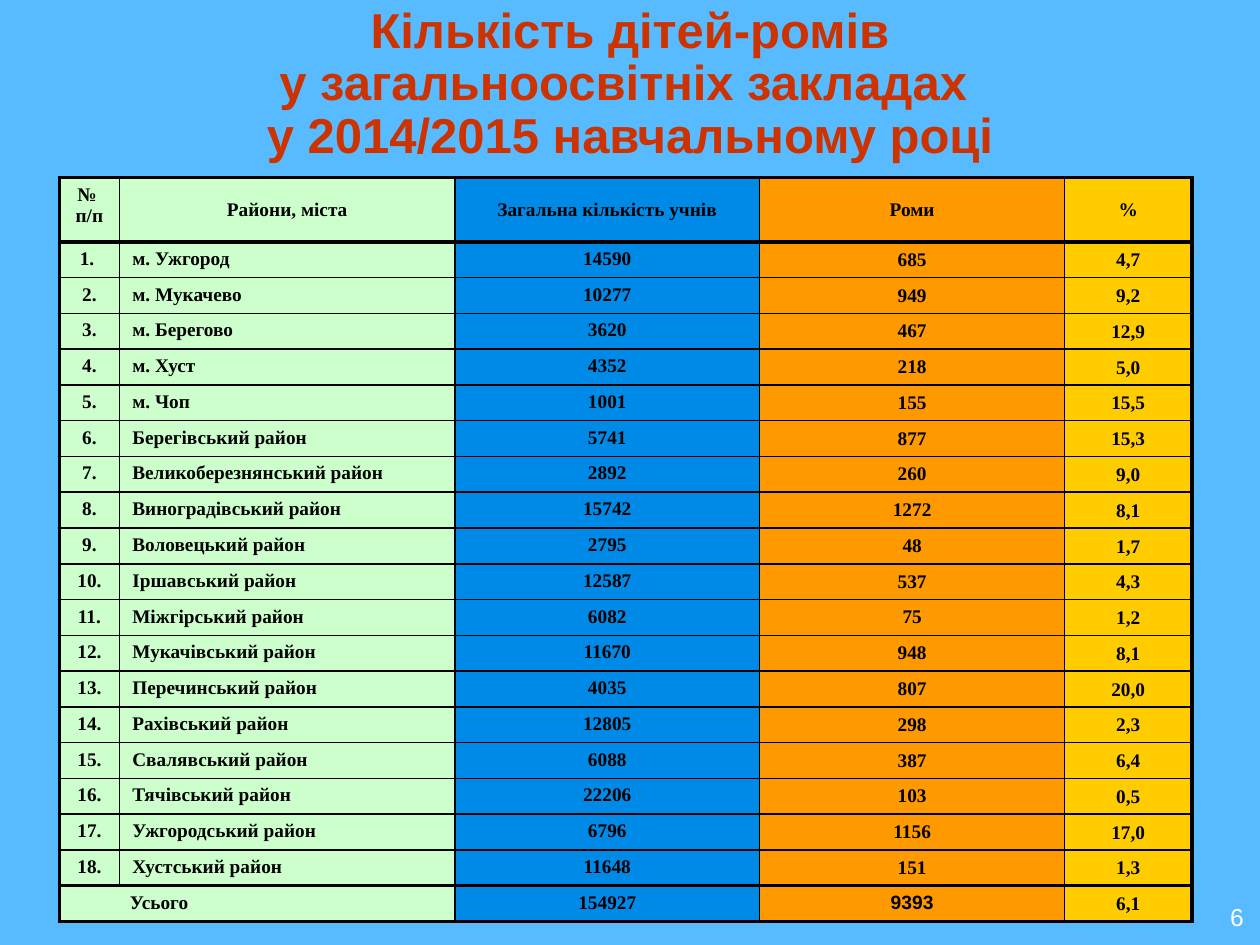
import pptx
import pptx.dml.color
import pptx.enum.text
import pptx.oxml
import pptx.oxml.ns
import pptx.util
from pptx.util import Inches

COLORS = {
    "sky": "58BBFF", "title": "CC3300", "black": "000000", "white": "FFFFFF",
    "green": "CCFFCC", "blue": "008AE8", "orange": "FF9900", "yellow": "FFCC00",
}
COLUMN_FILLS = ["green", "green", "blue", "orange", "yellow"]
COLUMN_WIDTHS = [0.48, 2.66, 2.42, 2.42, 1.01]
HEADER_HEIGHT, ROW_HEIGHT = 0.51, 0.27
THICK, THIN = 2.25, 1
SERIF, SANS = "Times New Roman", "Arial"
ALIGN = pptx.enum.text.PP_ALIGN
ANCHOR = pptx.enum.text.MSO_ANCHOR

HEADER = ["№ \nп/п", "Райони, міста", "Загальна кількість учнів", "Роми", "%"]
DISTRICTS = [
    ("м. Ужгород", "14590", "685", "4,7"),
    ("м. Мукачево", "10277", "949", "9,2"),
    ("м. Берегово", "3620", "467", "12,9"),
    ("м. Хуст", "4352", "218", "5,0"),
    ("м. Чоп", "1001", "155", "15,5"),
    ("Берегівський район", "5741", "877", "15,3"),
    ("Великоберезнянський район", "2892", "260", "9,0"),
    ("Виноградівський район", "15742", "1272", "8,1"),
    ("Воловецький район", "2795", "48", "1,7"),
    ("Іршавський район", "12587", "537", "4,3"),
    ("Міжгірський район", "6082", "75", "1,2"),
    ("Мукачівський район", "11670", "948", "8,1"),
    ("Перечинський район", "4035", "807", "20,0"),
    ("Рахівський район", "12805", "298", "2,3"),
    ("Свалявський район", "6088", "387", "6,4"),
    ("Тячівський район", "22206", "103", "0,5"),
    ("Ужгородський район", "6796", "1156", "17,0"),
    ("Хустський район", "11648", "151", "1,3"),
]
TOTAL = ["Усього", "", "154927", "9393", "6,1"]


def rgb(name):
    return pptx.dml.color.RGBColor.from_string(COLORS[name])


def write(tf, text, size=11, font=SERIF, color="black", bold=True,
          align=ALIGN.CENTER, spacing=None):
    """Fill a text frame; \\n starts a paragraph and \\v breaks a line."""
    tf.text = text
    tf.word_wrap = True
    for p in tf.paragraphs:
        p.alignment = align
        p.line_spacing = spacing
        for r in p.runs:
            r.font.size = pptx.util.Pt(size)
            r.font.name = font
            r.font.bold = bold
            r.font.color.rgb = rgb(color)


def add_text(s, text, left, top, width, height, anchor, **fmt):
    sp = s.shapes.add_textbox(Inches(left), Inches(top), Inches(width), Inches(height))
    write(sp.text_frame, text, **fmt)
    sp.text_frame.vertical_anchor = anchor


def set_borders(cell, **widths):
    """Draw black cell edges; widths are points keyed L, R, T and B."""
    tcPr = cell._tc.get_or_add_tcPr()
    for i, side in enumerate("LRTB"):
        tcPr.insert(i, pptx.oxml.parse_xml(
            f'<a:ln{side} {pptx.oxml.ns.nsdecls("a")} w="{pptx.util.Pt(widths[side])}">'
            f'<a:solidFill><a:srgbClr val="{COLORS["black"]}"/></a:solidFill></a:ln{side}>'))


def set_insets(cell, left, top, right, bottom):
    cell.margin_left, cell.margin_top = Inches(left), Inches(top)
    cell.margin_right, cell.margin_bottom = Inches(right), Inches(bottom)


def format_cell(cell, row, col, last_row):
    cell.fill.solid()
    cell.fill.fore_color.rgb = rgb(COLUMN_FILLS[col])
    set_borders(
        cell,
        L=THICK if col == 0 else THIN,
        R=THICK if col == 4 else THIN,
        T=THICK if row in (0, 1, last_row) else THIN,
        B=THICK if row in (0, last_row - 1, last_row) else THIN)
    if row == 0:
        cell.vertical_anchor = ANCHOR.TOP if col == 0 else ANCHOR.MIDDLE
    elif col == 4:
        cell.vertical_anchor = ANCHOR.MIDDLE
        set_insets(cell, 0.01, 0.01, 0.01, 0)
    elif col == 3 and row < last_row:
        cell.vertical_anchor = ANCHOR.MIDDLE
        set_insets(cell, 0.07, 0, 0.07, 0)


def add_district_table(s):
    rows = [HEADER]
    rows += [(f"{n}. " if n == 1 else f"{n}.", *d) for n, d in enumerate(DISTRICTS, 1)]
    rows.append(TOTAL)
    last = len(rows) - 1
    height = HEADER_HEIGHT + last * ROW_HEIGHT
    table = s.shapes.add_table(len(rows), len(HEADER), Inches(0.47), Inches(1.41),
                               Inches(sum(COLUMN_WIDTHS)), Inches(height)).table
    table.first_row = table.horz_banding = False
    for column, width in zip(table.columns, COLUMN_WIDTHS):
        column.width = Inches(width)
    for i, values in enumerate(rows):
        table.rows[i].height = Inches(ROW_HEIGHT if i else HEADER_HEIGHT)
        for j, value in enumerate(values):
            cell = table.cell(i, j)
            is_name = (j == 1 and i > 0) or (i == last and j == 0)
            write(cell.text_frame, value,
                  align=ALIGN.LEFT if is_name else ALIGN.CENTER,
                  font=SANS if (i, j) == (last, 3) else SERIF)
            format_cell(cell, i, j, last)
    total = table.cell(last, 0)
    total.merge(table.cell(last, 1))
    total.margin_left = Inches(0.56)


def main():
    prs = pptx.Presentation()
    prs.slide_width, prs.slide_height = Inches(10), Inches(7.5)
    s = prs.slides.add_slide(prs.slide_layouts[6])
    s.background.fill.solid()
    s.background.fill.fore_color.rgb = rgb("sky")
    add_text(s, "Кількість дітей-ромів\vу загальноосвітніх закладах \v"
                "у 2014/2015 навчальному році",
             0.5, 0.09, 9, 1.17, ANCHOR.MIDDLE,
             size=28, font=SANS, color="title", spacing=0.9)
    add_district_table(s)
    add_text(s, "6", 7.64, 6.92, 2.33, 0.52, ANCHOR.BOTTOM,
             size=14, font=SANS, color="white", bold=False, align=ALIGN.RIGHT)
    prs.save("out.pptx")


if __name__ == "__main__":
    main()
